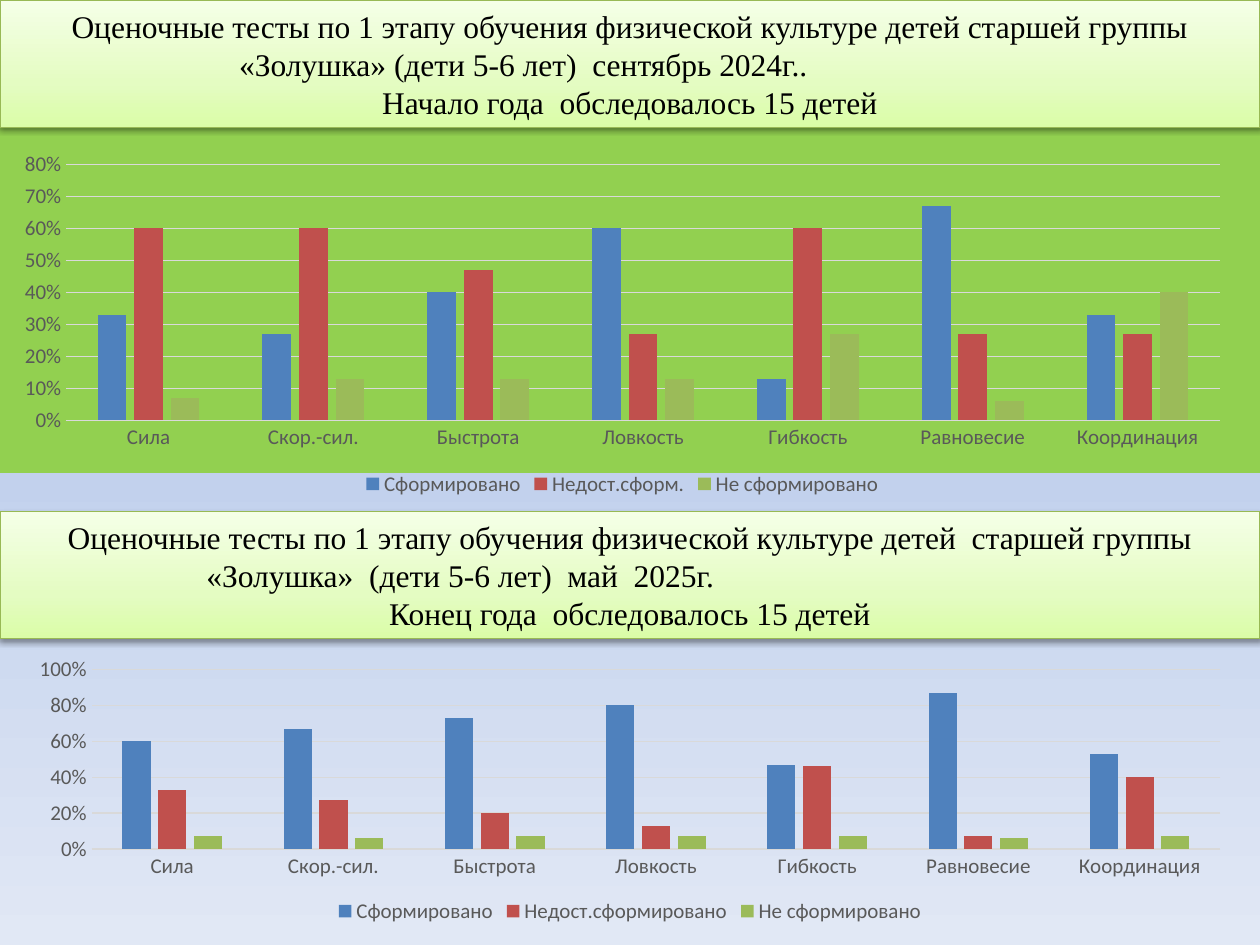
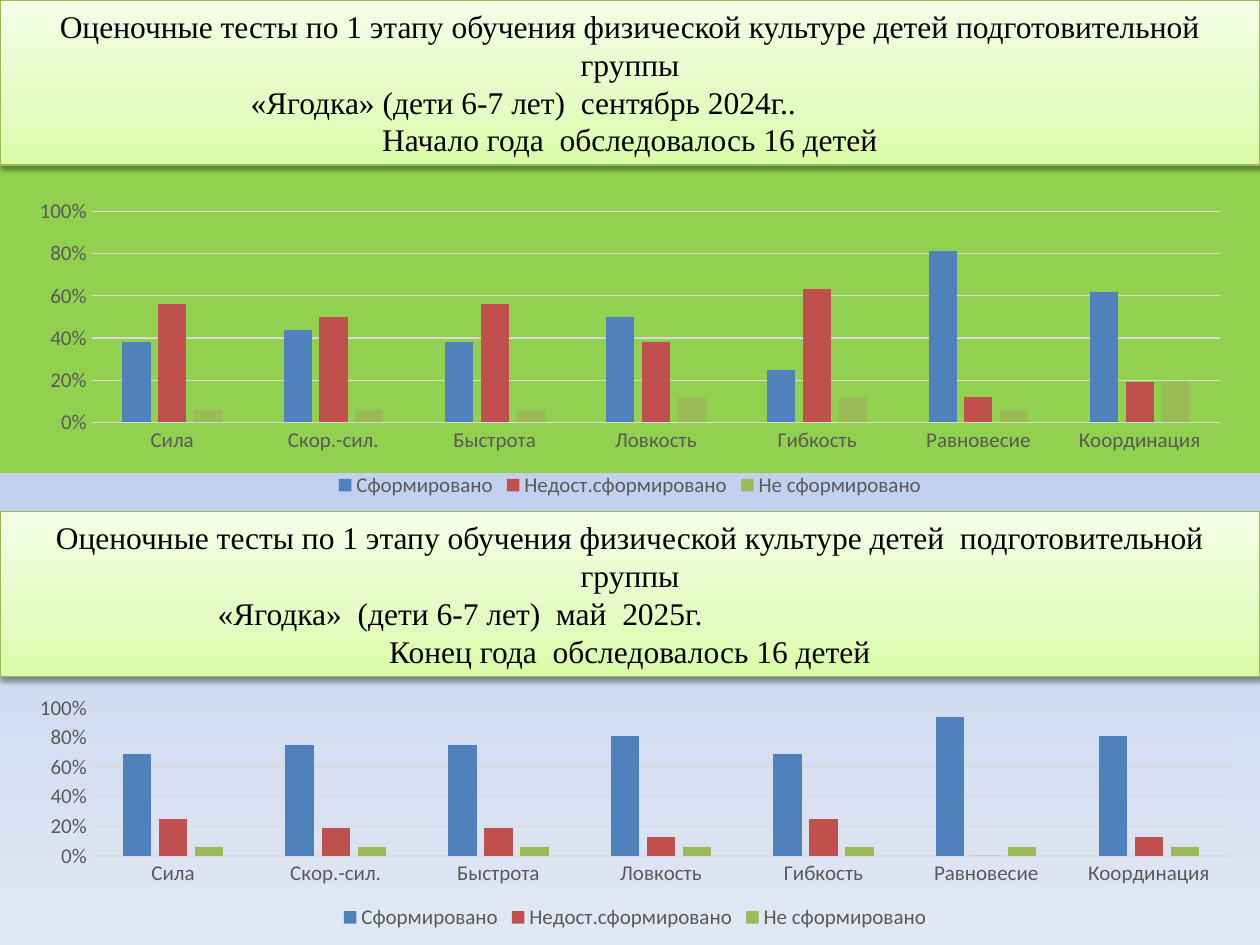
from lxml.etree import SubElement
from pptx import Presentation
from pptx.chart.data import CategoryChartData
from pptx.dml.color import RGBColor
from pptx.enum.chart import XL_CHART_TYPE, XL_LEGEND_POSITION, XL_TICK_MARK
from pptx.enum.shapes import MSO_SHAPE
from pptx.enum.text import MSO_AUTO_SIZE, PP_ALIGN
from pptx.oxml.ns import qn
from pptx.util import Inches, Pt

# Shared look
SLIDE_WIDTH, SLIDE_HEIGHT = 10, 7.5
PAGE_STOPS = [(50, "92D050", 63), (50, "C2D1ED", 100), (100, "E1E8F5", 100)]
BAND_STOPS = [(0, "DAFDA7", 100), (35, "E4FCC2", 100), (100, "F5FFE7", 100)]
BAND_LINE, GRID, LABEL = "98B955", "D9D9D9", "595959"
SERIES_COLORS = ["4F81BD", "C0504D", "9BBB59"]
TITLE_FONT = {"name": "Times New Roman", "size": Pt(18)}
LABEL_FONT = {"name": "Calibri", "size": Pt(12)}
QUALITIES = ["Сила", "Скор.-сил.", "Быстрота", "Ловкость", "Гибкость",
             "Равновесие", "Координация"]
LEVELS = ["Сформировано", "Недост.сформировано", "Не сформировано"]
SHORT_LEVELS = ["Сформировано", "Недост.сформ.", "Не сформировано"]
TEST = "Оценочные тесты по 1 этапу обучения физической культуре детей"

# Each slide holds two surveys: a title band and a chart below it.
# The second title line starts at its own indent.
SLIDES = [
    [
        {"band": (0, 0, 10, 1.01), "indent": 1.8,
         "lines": [f"{TEST} старшей группы",
                   "«Золушка» (дети 5-6 лет)  сентябрь 2024г..",
                   "Начало года  обследовалось 15 детей"],
         "chart": (0, 1.15, 9.88, 2.83), "scale": (0.8, 0.1),
         "levels": SHORT_LEVELS,
         "values": [[0.33, 0.27, 0.4, 0.6, 0.13, 0.67, 0.33],
                    [0.6, 0.6, 0.47, 0.27, 0.6, 0.27, 0.27],
                    [0.07, 0.13, 0.13, 0.13, 0.27, 0.06, 0.4]]},
        {"band": (0, 4.06, 10, 1.01), "indent": 1.54,
         "lines": [f"{TEST}  старшей группы",
                   "«Золушка»  (дети 5-6 лет)  май  2025г.",
                   "Конец года  обследовалось 15 детей"],
         "chart": (0.12, 5.17, 9.76, 2.2), "scale": (1, 0.2),
         "levels": LEVELS,
         "values": [[0.6, 0.67, 0.73, 0.8, 0.47, 0.87, 0.53],
                    [0.33, 0.27, 0.2, 0.13, 0.46, 0.07, 0.4],
                    [0.07, 0.06, 0.07, 0.07, 0.07, 0.06, 0.07]]},
    ],
    [
        {"band": (0, 0, 10, 1.31), "indent": 1.89,
         "lines": [f"{TEST} подготовительной группы",
                   "«Ягодка» (дети 6-7 лет)  сентябрь 2024г..",
                   "Начало года  обследовалось 16 детей"],
         "chart": (0.12, 1.53, 9.76, 2.46), "scale": (1, 0.2),
         "levels": LEVELS,
         "values": [[0.38, 0.44, 0.38, 0.5, 0.25, 0.81, 0.62],
                    [0.56, 0.5, 0.56, 0.38, 0.63, 0.12, 0.19],
                    [0.06, 0.06, 0.06, 0.12, 0.12, 0.06, 0.19]]},
        {"band": (0, 4.06, 10, 1.31), "indent": 1.63,
         "lines": [f"{TEST}  подготовительной группы",
                   "«Ягодка»  (дети 6-7 лет)  май  2025г.",
                   "Конец года  обследовалось 16 детей"],
         "chart": (0.12, 5.48, 9.84, 1.94), "scale": (1, 0.2),
         "levels": LEVELS,
         "values": [[0.69, 0.75, 0.75, 0.81, 0.69, 0.94, 0.81],
                    [0.25, 0.19, 0.19, 0.13, 0.25, 0, 0.13],
                    [0.06, 0.06, 0.06, 0.06, 0.06, 0.06, 0.06]]},
    ],
]


def color(value):
    return RGBColor.from_string(value)


def set_font(font, formats, value):
    for name, setting in formats.items():
        setattr(font, name, setting)
    font.color.rgb = color(value)


def set_line(line, value):
    line.color.rgb = color(value)
    line.width = Pt(0.75)


def add_color(parent, value, alpha):
    node = SubElement(parent, qn("a:srgbClr"), val=value)
    if alpha < 100:
        SubElement(node, qn("a:alpha"), val=str(alpha * 1000))


def set_gradient(owner, fill, stops, angle):
    """Fill with (position, colour, opacity) stops, all in percent."""
    fill.gradient()
    fill.gradient_angle = angle
    stop_list = next(owner.iter(qn("a:gsLst")))
    for old_stop in list(stop_list):
        stop_list.remove(old_stop)
    for position, value, alpha in stops:
        stop = SubElement(stop_list, qn("a:gs"), pos=str(position * 1000))
        add_color(stop, value, alpha)


def add_title_band(page, box, lines, indent):
    band = page.shapes.add_shape(MSO_SHAPE.RECTANGLE, *map(Inches, box))
    set_gradient(band.element, band.fill, BAND_STOPS, 90)
    set_line(band.line, BAND_LINE)

    # Soft shadow below the band
    band.shadow.inherit = False
    effects = next(band.element.iter(qn("a:effectLst")))
    shadow = SubElement(effects, qn("a:outerShdw"), blurRad=str(Pt(3.1)),
                        dist=str(Pt(1.6)), dir="5400000", rotWithShape="0")
    add_color(shadow, "000000", 38)

    frame = band.text_frame
    frame.word_wrap = True
    frame.auto_size = MSO_AUTO_SIZE.SHAPE_TO_FIT_TEXT
    for index, line in enumerate(lines):
        para = frame.paragraphs[0] if index == 0 else frame.add_paragraph()
        para.alignment = PP_ALIGN.CENTER
        if index == 1:
            para.alignment = PP_ALIGN.LEFT
            para._p.get_or_add_pPr().set("marL", str(Inches(indent)))
        span = para.add_run()
        span.text = line
        set_font(span.font, TITLE_FONT, "000000")


def clear_chart_background(chart):
    space = chart.element
    plot_area = next(space.iter(qn("c:plotArea")))
    for parent in (space, plot_area):
        shape_format = SubElement(parent, qn("c:spPr"))
        SubElement(shape_format, qn("a:noFill"))
        line = SubElement(shape_format, qn("a:ln"))
        SubElement(line, qn("a:noFill"))
        if parent is space:
            space.find(qn("c:chart")).addnext(shape_format)


def add_results_chart(page, box, levels, values, scale):
    data = CategoryChartData(number_format="0%")
    data.categories = QUALITIES
    for level, shares in zip(levels, values):
        data.add_series(level, shares)
    chart = page.shapes.add_chart(XL_CHART_TYPE.COLUMN_CLUSTERED,
                                  *map(Inches, box), data).chart
    chart.has_title = False
    set_font(chart.font, LABEL_FONT, LABEL)
    clear_chart_background(chart)

    # Columns
    plot = chart.plots[0]
    for name, setting in {"gap_width": 219, "overlap": -27,
                          "vary_by_categories": False}.items():
        setattr(plot, name, setting)
    for series, value in zip(plot.series, SERIES_COLORS):
        series.format.fill.solid()
        series.format.fill.fore_color.rgb = color(value)

    # Axes
    for axis in (chart.category_axis, chart.value_axis):
        axis.major_tick_mark = axis.minor_tick_mark = XL_TICK_MARK.NONE
        set_font(axis.tick_labels.font, LABEL_FONT, LABEL)
    set_line(chart.category_axis.format.line, GRID)
    axis = chart.value_axis
    axis.minimum_scale = 0
    axis.maximum_scale, axis.major_unit = scale
    axis.format.line.fill.background()
    axis.tick_labels.number_format = "0%"
    axis.tick_labels.number_format_is_linked = False
    set_line(axis.major_gridlines.format.line, GRID)

    # Legend
    chart.has_legend = True
    chart.legend.position = XL_LEGEND_POSITION.BOTTOM
    chart.legend.include_in_layout = False
    set_font(chart.legend.font, LABEL_FONT, LABEL)


def add_survey_slide(deck, surveys):
    page = deck.slides.add_slide(deck.slide_layouts[6])
    set_gradient(page.element, page.background.fill, PAGE_STOPS, 270)
    for survey in surveys:
        add_title_band(page, survey["band"], survey["lines"], survey["indent"])
    for survey in surveys:
        add_results_chart(page, survey["chart"], survey["levels"],
                          survey["values"], survey["scale"])


def main():
    deck = Presentation()
    deck.slide_width = Inches(SLIDE_WIDTH)
    deck.slide_height = Inches(SLIDE_HEIGHT)
    for surveys in SLIDES:
        add_survey_slide(deck, surveys)
    deck.save("out.pptx")


if __name__ == "__main__":
    main()
